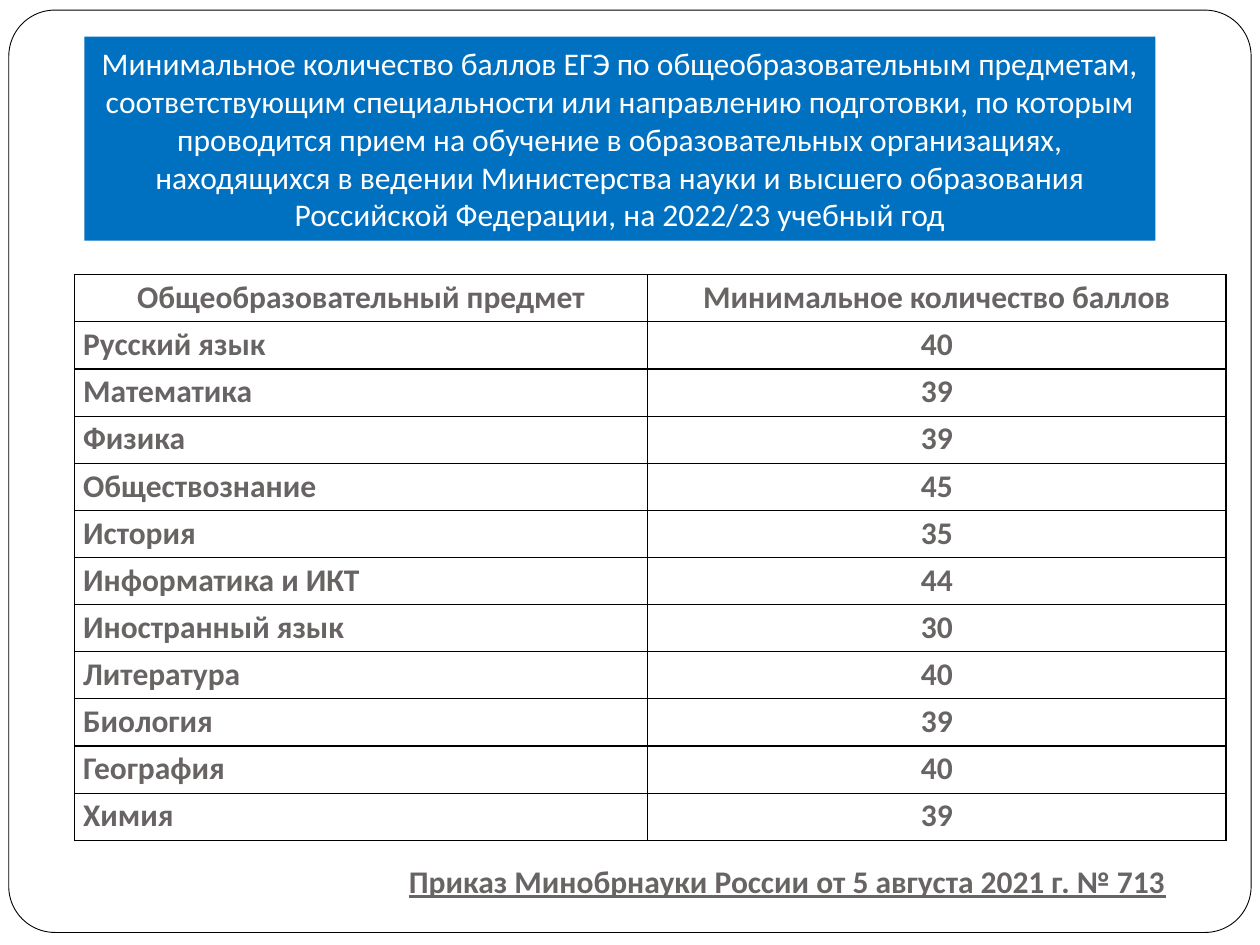
import pptx
import pptx.util
import pptx.dml.color
import pptx.enum.shapes
import pptx.enum.text
import pptx.oxml
import pptx.oxml.ns

Pt = pptx.util.Pt
Inches = pptx.util.Inches
RGB = pptx.dml.color.RGBColor
ALIGN = pptx.enum.text.PP_ALIGN
SHAPE = pptx.enum.shapes.MSO_SHAPE

WHITE = RGB(0xFF, 0xFF, 0xFF)
BLACK = RGB(0, 0, 0)
BLUE = RGB(0x00, 0x70, 0xC0)
GRAY = RGB(0x69, 0x64, 0x64)

deck = pptx.Presentation()
deck.slide_width, deck.slide_height = Inches(10), Inches(7.5)
slide = deck.slides.add_slide(deck.slide_layouts[6])


def area(left, top, width, height):
    """Turn percentages of the slide into a position and size."""
    wide, high = deck.slide_width / 100, deck.slide_height / 100
    return [int(n) for n in (left * wide, top * high, width * wide, height * high)]


def write(frame, text, align, color, **style):
    """Put one formatted line of text into a frame."""
    frame.word_wrap = True
    line = frame.paragraphs[0]
    line.alignment = align
    run = line.add_run()
    run.text = text
    run.font.color.rgb = color
    for key, value in {"name": "Calibri", "size": Pt(18), **style}.items():
        setattr(run.font, key, value)


# Rounded frame and title banner
border = slide.shapes.add_shape(SHAPE.ROUNDED_RECTANGLE, *area(0.7, 1.07, 98.6, 97.6))
border.adjustments[0] = 0.05
border.line.color.rgb = BLACK
border.line.width = Pt(0.5)
banner = slide.shapes.add_shape(SHAPE.RECTANGLE, *area(6.7, 3.87, 85, 21.6))
banner.line.fill.background()
for shape, color in ((border, WHITE), (banner, BLUE)):
    shape.shadow.inherit = False
    shape.fill.solid()
    shape.fill.fore_color.rgb = color
title = (
    "Минимальное количество баллов ЕГЭ по общеобразовательным предметам, "
    "соответствующим специальности или направлению подготовки, по которым "
    "проводится прием на обучение в образовательных организациях, "
    "находящихся в ведении Министерства науки и высшего образования "
    "Российской Федерации, на 2022/23 учебный год"
)
write(banner.text_frame, title, ALIGN.CENTER, WHITE)

# Table of minimum scores
scores = [
    ("Общеобразовательный предмет", "Минимальное количество баллов"),
    ("Русский язык", "40"),
    ("Математика", "39"),
    ("Физика", "39"),
    ("Обществознание", "45"),
    ("История", "35"),
    ("Информатика и ИКТ", "44"),
    ("Иностранный язык", "30"),
    ("Литература", "40"),
    ("Биология", "39"),
    ("География", "40"),
    ("Химия", "39"),
]
box = area(5.9, 29.07, 91.4, 59.9)
table = slide.shapes.add_table(len(scores), 2, *box).table
table.columns[0].width = Inches(4.55)
table.columns[1].width = box[2] - Inches(4.55)
margins = {
    "margin_left": Inches(0.07),
    "margin_right": Inches(0.07),
    "margin_top": Inches(0.03),
    "margin_bottom": Inches(0.03),
}
for row, pair in enumerate(scores):
    for col, text in enumerate(pair):
        cell = table.cell(row, col)
        for key, value in margins.items():
            setattr(cell, key, value)
        align = ALIGN.LEFT if row and not col else ALIGN.CENTER
        write(cell.text_frame, text, align, GRAY, bold=True)
        # Borders come before the fill in the cell properties
        props = cell._tc.get_or_add_tcPr()
        for side in ("lnL", "lnR", "lnT", "lnB"):
            props.append(pptx.oxml.parse_xml(
                f'<a:{side} {pptx.oxml.ns.nsdecls("a")} w="{Pt(0.75)}">'
                f'<a:solidFill><a:srgbClr val="{BLACK}"/></a:solidFill></a:{side}>'
            ))
        cell.fill.solid()
        cell.fill.fore_color.rgb = WHITE

# Source of the scores
note = slide.shapes.add_textbox(*area(4.3, 90.53, 89.8, 5.33)).text_frame
note.margin_right = Inches(0.16)
write(note, "Приказ Минобрнауки России от 5 августа 2021 г. № 713",
      ALIGN.RIGHT, GRAY, bold=True, underline=True)

deck.save("out.pptx")
